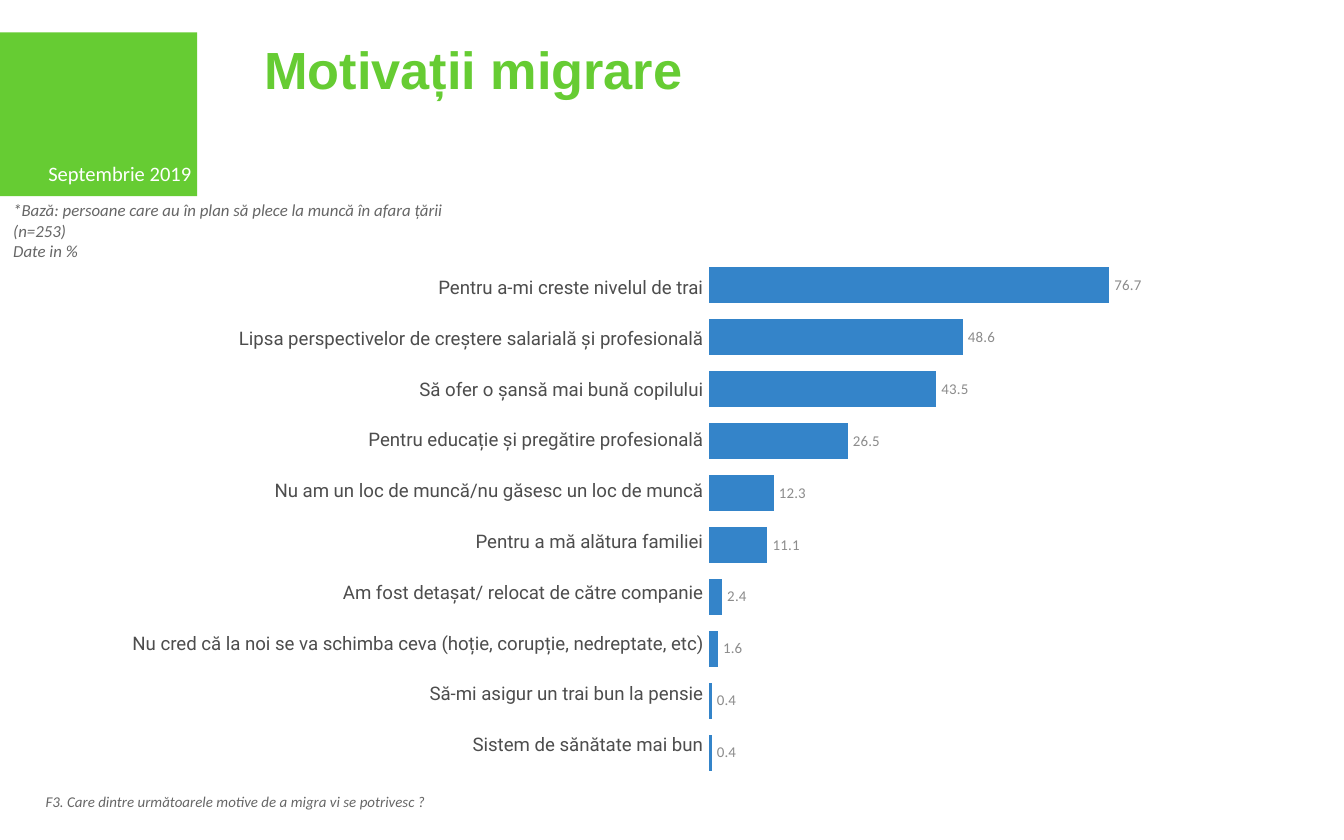
from lxml import etree
from pptx import Presentation
from pptx import util as u
from pptx.chart import data as chart_data
from pptx.dml import color
from pptx.enum import chart as ch, shapes, text
from pptx.oxml import ns

Pt = u.Pt
GREEN, BLUE, GREY = "66CC33", "3484C9", "666666"

MOTIVES = [
    ("Pentru a-mi creste nivelul de trai", 76.7),
    ("Lipsa perspectivelor de creștere salarială și profesională", 48.6),
    ("Să ofer o șansă mai bună copilului", 43.5),
    ("Pentru educație și pregătire profesională", 26.5),
    ("Nu am un loc de muncă/nu găsesc un loc de muncă", 12.3),
    ("Pentru a mă alătura familiei", 11.1),
    ("Am fost detașat/ relocat de către companie", 2.4),
    ("Nu cred că la noi se va schimba ceva (hoție, corupție, nedreptate, etc)", 1.6),
    ("Să-mi asigur un trai bun la pensie", 0.4),
    ("Sistem de sănătate mai bun", 0.4),
]


def rgb(value):
    return color.RGBColor.from_string(value)


def style(font, size, name, hex_color, bold=False, italic=False):
    font.size, font.name = Pt(size), name
    font.bold, font.italic = bold, italic
    font.color.rgb = rgb(hex_color)


def write(frame, lines, align=text.PP_ALIGN.LEFT, **look):
    """Fill a text frame with one paragraph per line."""
    for i, line in enumerate(lines):
        paragraph = frame.add_paragraph() if i else frame.paragraphs[0]
        paragraph.alignment = align
        run = paragraph.add_run()
        run.text = line
        style(run.font, **look)


def add_text(slide, box, lines, anchor=text.MSO_ANCHOR.TOP, inset=None, **look):
    frame = slide.shapes.add_textbox(*map(Pt, box)).text_frame
    frame.word_wrap = True
    frame.vertical_anchor = anchor
    if inset is not None:
        frame.margin_left = frame.margin_right = Pt(inset)
        frame.margin_top = frame.margin_bottom = Pt(inset)
    write(frame, lines, **look)


def add_date_block(slide, box):
    left, top, width, height = box
    block = slide.shapes.add_shape(shapes.MSO_SHAPE.RECTANGLE, *map(Pt, box))
    block.shadow.inherit = False
    block.fill.solid()
    block.fill.fore_color.rgb = rgb(GREEN)
    block.line.fill.background()
    # Date sits in the lower right corner of the block
    add_text(slide, (left + 10, top + height - 19.5, width - 13, 14),
             ["Septembrie 2019"], anchor=text.MSO_ANCHOR.MIDDLE, inset=0,
             align=text.PP_ALIGN.RIGHT, size=11, name="Calibri", hex_color="FFFFFF")


def fix_plot_area(chart, **fractions):
    """Pin the inner plot area to fractions of the chart box."""
    plot_area = chart._chartSpace.chart.plotArea
    for old in plot_area.findall(ns.qn("c:layout")):
        plot_area.remove(old)
    layout = etree.Element(ns.qn("c:layout"))
    manual = etree.SubElement(layout, ns.qn("c:manualLayout"))
    settings = {"layoutTarget": "inner", "xMode": "edge", "yMode": "edge", **fractions}
    for tag, value in settings.items():
        etree.SubElement(manual, ns.qn("c:" + tag)).set("val", str(value))
    plot_area.insert(0, layout)


def add_motive_bars(slide, box):
    data = chart_data.CategoryChartData()
    data.categories = [str(i + 1) for i in range(len(MOTIVES))]
    data.add_series("Series 1", [share for _, share in MOTIVES])
    chart = slide.shapes.add_chart(ch.XL_CHART_TYPE.BAR_CLUSTERED,
                                   *map(Pt, box), data).chart
    chart.has_legend = chart.has_title = False
    style(chart.font, 10, "Calibri", GREY)
    fix_plot_area(chart, x=0.084, y=0.071, w=0.866, h=0.914)

    # Both axes are hidden; the first motive is on top
    chart.category_axis.reverse_order = True
    chart.value_axis.minimum_scale, chart.value_axis.maximum_scale = 0, 90
    chart.value_axis.has_major_gridlines = False
    chart.category_axis.visible = chart.value_axis.visible = False

    plot = chart.plots[0]
    plot.gap_width, plot.overlap = 44, 12
    plot.vary_by_categories = False
    bars = plot.series[0]
    bars.format.fill.solid()
    bars.format.fill.fore_color.rgb = rgb(BLUE)

    labels = bars.data_labels
    labels.show_value = True
    labels.number_format, labels.number_format_is_linked = "#,##0.0", False
    labels.position = ch.XL_LABEL_POSITION.OUTSIDE_END
    style(labels.font, 8, "Calibri", "8C8C8C")


def add_motive_names(slide, box):
    table = slide.shapes.add_table(len(MOTIVES), 1, *map(Pt, box)).table
    table.first_row = table.horz_banding = False
    for row, (motive, _) in enumerate(MOTIVES):
        table.rows[row].height = Pt(box[3] / len(MOTIVES))
        cell = table.cell(row, 0)
        cell.fill.background()
        cell.vertical_anchor = text.MSO_ANCHOR.MIDDLE
        cell.margin_left = cell.margin_right = cell.margin_top = Pt(0.75)
        cell.margin_bottom = 0
        write(cell.text_frame, [motive], align=text.PP_ALIGN.RIGHT,
              size=10, name="Roboto", hex_color="4D4D4D")


def main():
    prs = Presentation()
    prs.slide_width, prs.slide_height = Pt(720), Pt(450)
    slide = prs.slides.add_slide(prs.slide_layouts[6])

    add_date_block(slide, (0, 17.28, 105.6, 87.84))
    add_motive_bars(slide, (355.68, 117.36, 290.16, 304.56))

    # Title
    add_text(slide, (134.64, 12.24, 529.92, 44.64), ["Motivații migrare"],
             anchor=text.MSO_ANCHOR.BOTTOM, size=28, name="Arial",
             hex_color=GREEN, bold=True)

    # Sample base and question notes
    note = dict(name="Calibri", hex_color=GREY, italic=True)
    add_text(slide, (0, 103.68, 246.24, 51.12),
             ["*Bază: persoane care au în plan să plece la muncă în afara țării (n=253)",
              "Date in %"], size=9, **note)
    add_text(slide, (17.28, 421.2, 663.84, 17.28),
             ["F3. Care dintre următoarele motive de a migra vi se potrivesc ?"],
             size=8, **note)

    add_motive_names(slide, (54.72, 140.4, 322.56, 272.2))
    prs.save("out.pptx")


if __name__ == "__main__":
    main()
